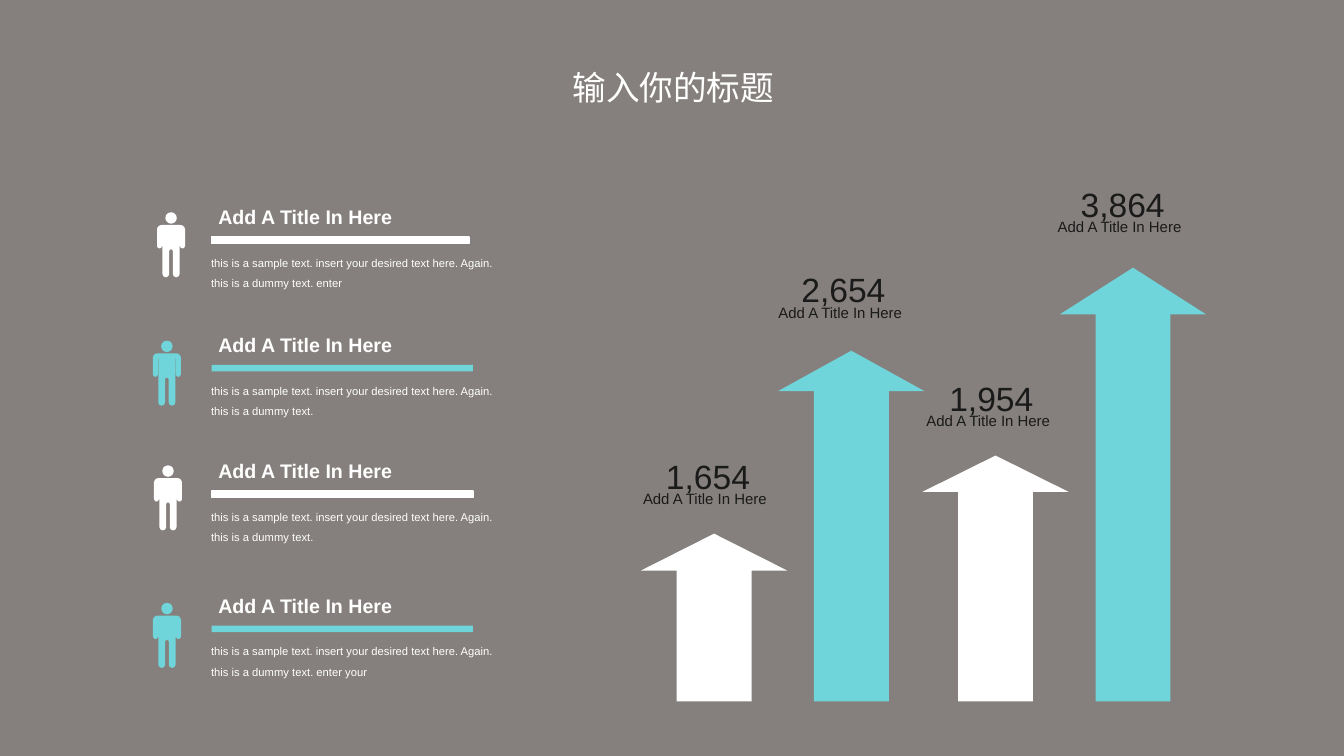
from dataclasses import dataclass
from typing import Optional

from lxml import etree
from pptx import Presentation
from pptx.dml.color import RGBColor
from pptx.enum.shapes import MSO_SHAPE
from pptx.enum.text import MSO_AUTO_SIZE, PP_ALIGN
from pptx.oxml.ns import qn
from pptx.shapes.autoshape import Shape
from pptx.shapes.shapetree import GroupShapes, SlideShapes
from pptx.util import Pt

RECTANGLE = MSO_SHAPE.RECTANGLE
OVAL = MSO_SHAPE.OVAL
GROW = MSO_AUTO_SIZE.SHAPE_TO_FIT_TEXT
LEFT = PP_ALIGN.LEFT
RIGHT = PP_ALIGN.RIGHT

GREY = RGBColor(0x85, 0x80, 0x7D)
WHITE = RGBColor(0xFF, 0xFF, 0xFF)
TEAL = RGBColor(0x6F, 0xD5, 0xDA)
BLACK = RGBColor(0x1A, 0x1A, 0x1A)

LATIN_FONT = "Arial"
CHINESE_FONT = "Noto Sans CJK SC"
CAPTION = "Add A Title In Here"
SAMPLE = "this is a sample text. insert your desired text here. Again. this is a dummy text."

ARROW_BASE = 501
ARROW_WIDTH = 104.6
SHAFT_INSET = 25.6
SHAFT_WIDTH = 53.5
ARROW_TIP = 52.3

PERSON_WIDTH = 20
LEFT_HALF = [
    (10, 0), (3.4, 0), (2, 0.3), (0.7, 1.2), (0, 2.9), (0, 15.1), (0.6, 16.3),
    (1.8, 16.8), (3, 16.3), (3.6, 15.1), (3.6, 3.6), (3.9, 3.6), (3.9, 35.1),
    (4.6, 36.7), (6.3, 37.4), (8, 36.7), (8.7, 35.1), (8.7, 18.7), (9.1, 17.7),
    (10, 17.3),
]
PERSON = LEFT_HALF + [(PERSON_WIDTH - x, y) for x, y in reversed(LEFT_HALF)]

Shapes = SlideShapes | GroupShapes


@dataclass(frozen=True)
class Arrow:
    left: float
    tip: float
    shoulder: float
    color: RGBColor


@dataclass(frozen=True)
class Figure:
    left: float
    top: float
    value: str


@dataclass(frozen=True)
class Item:
    top: float
    person_left: float
    person_top: float
    bar_width: float
    color: RGBColor
    text: str


@dataclass(frozen=True)
class TextStyle:
    size: float
    color: RGBColor
    font: str = LATIN_FONT
    bold: bool = False
    spacing: Optional[float] = None
    alignment: PP_ALIGN = LEFT
    wrap: bool = True


TITLE_STYLE = TextStyle(24, WHITE, CHINESE_FONT)
VALUE_STYLE = TextStyle(24, BLACK, wrap=False)
CAPTION_STYLE = TextStyle(10.7, BLACK, spacing=12)
HEADING_STYLE = TextStyle(14, WHITE, bold=True, spacing=16, alignment=RIGHT)
BODY_STYLE = TextStyle(8, WHITE, spacing=14.7)

ARROWS = [
    Arrow(757, 191.2, 224.6, TEAL),
    Arrow(658.8, 325.4, 351.4, WHITE),
    Arrow(555.8, 250.5, 279.4, TEAL),
    Arrow(457.8, 381.2, 407.6, WHITE),
]
FIGURES = [
    Figure(468.6, 321.8, "1,654"),
    Figure(565.3, 188.8, "2,654"),
    Figure(764.8, 127.6, "3,864"),
    Figure(671, 266.2, "1,954"),
]
ITEMS = [
    Item(144, 112.2, 160.7, 183.9, WHITE, SAMPLE + " enter"),
    Item(235.4, 109.2, 252.4, 186.7, TEAL, SAMPLE),
    Item(325.4, 110, 341.5, 186.7, WHITE, SAMPLE),
    Item(421.6, 109.3, 439.7, 186.7, TEAL, SAMPLE + " enter your"),
]


def paint(shape: Shape, color: RGBColor, outlined: bool = False) -> None:
    shape.shadow.inherit = False
    shape.fill.solid()
    shape.fill.fore_color.rgb = color
    if outlined:
        shape.line.color.rgb = color
        shape.line.width = Pt(1)
    else:
        shape.line.fill.background()


def add_text(shapes: Shapes, left: float, top: float, width: float, height: float,
             text: str, style: TextStyle) -> None:
    text_frame = shapes.add_textbox(Pt(left), Pt(top), Pt(width), Pt(height)).text_frame
    text_frame.word_wrap = style.wrap
    text_frame.auto_size = GROW
    text_frame.text = text
    paragraph = text_frame.paragraphs[0]
    paragraph.alignment = style.alignment
    if style.spacing:
        paragraph.line_spacing = Pt(style.spacing)
    run = paragraph.runs[0]
    run.font.size = Pt(style.size)
    run.font.bold = style.bold
    run.font.color.rgb = style.color
    run.font.name = style.font
    east_asian = etree.SubElement(run._r.get_or_add_rPr(), qn("a:ea"))
    east_asian.set("typeface", style.font)


def add_outline(shapes: Shapes, left: float, top: float,
                points: list[tuple[float, float]], color: RGBColor) -> None:
    corners = [(Pt(x), Pt(y)) for x, y in points]
    builder = shapes.build_freeform(*corners[0], scale=1.0)
    builder.add_line_segments(corners[1:], close=True)
    paint(builder.convert_to_shape(Pt(left), Pt(top)), color)


def add_arrow(shapes: Shapes, arrow: Arrow) -> None:
    head = arrow.shoulder - arrow.tip
    base = ARROW_BASE - arrow.tip
    shaft_right = SHAFT_INSET + SHAFT_WIDTH
    points = [
        (ARROW_TIP, 0), (ARROW_WIDTH, head), (shaft_right, head), (shaft_right, base),
        (SHAFT_INSET, base), (SHAFT_INSET, head), (0, head),
    ]
    add_outline(shapes, arrow.left, arrow.tip, points, arrow.color)


def add_person(shapes: Shapes, item: Item) -> None:
    head = shapes.add_shape(OVAL, Pt(item.person_left + 5.9), Pt(item.person_top - 9.1),
                            Pt(8.2), Pt(8.2))
    paint(head, item.color)
    add_outline(shapes, item.person_left, item.person_top, PERSON, item.color)


def add_figure(shapes: Shapes, figure: Figure) -> None:
    add_text(shapes, figure.left, figure.top, 75.6, 36, figure.value, VALUE_STYLE)
    add_text(shapes, figure.left - 16.4, figure.top + 25.4, 114.5, 19.4, CAPTION, CAPTION_STYLE)


def add_item(shapes: Shapes, item: Item) -> None:
    add_text(shapes, 108, item.top, 179.3, 23.8, CAPTION, HEADING_STYLE)
    add_text(shapes, 143.7, item.top + 30.2, 217.4, 37.4, item.text, BODY_STYLE)
    bar = shapes.add_shape(RECTANGLE, Pt(151.2), Pt(item.top + 25.2),
                           Pt(item.bar_width), Pt(4.8))
    paint(bar, item.color, outlined=item.color == WHITE)


def main() -> None:
    presentation = Presentation()
    presentation.slide_width = Pt(960)
    presentation.slide_height = Pt(540)
    slide = presentation.slides.add_slide(presentation.slide_layouts[6])
    shapes = slide.shapes
    background = shapes.add_shape(RECTANGLE, 0, 0, Pt(960), Pt(540))
    paint(background, GREY, outlined=True)
    add_text(shapes, 401.8, 44.6, 190, 36, "输入你的标题", TITLE_STYLE)
    for arrow in ARROWS:
        add_arrow(shapes, arrow)
    for item in ITEMS:
        add_person(shapes.add_group_shape().shapes, item)
    for figure in FIGURES:
        add_figure(shapes.add_group_shape().shapes, figure)
    for item in ITEMS:
        add_item(shapes.add_group_shape().shapes, item)
    presentation.save("out.pptx")


if __name__ == "__main__":
    main()
